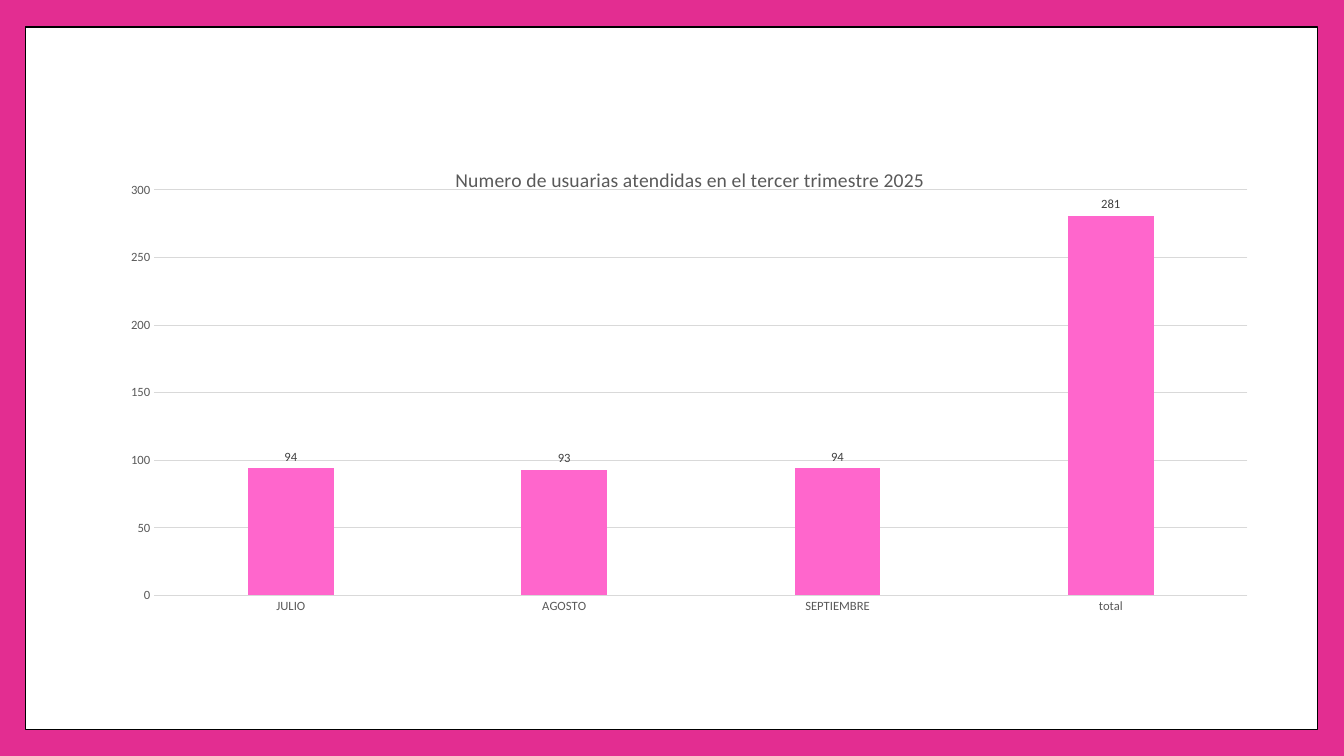
from dataclasses import dataclass

from lxml.etree import SubElement
from pptx import Presentation
from pptx.chart.data import CategoryChartData
from pptx.dml.color import RGBColor
from pptx.enum.chart import XL_CHART_TYPE, XL_LABEL_POSITION, XL_TICK_MARK
from pptx.enum.shapes import MSO_SHAPE
from pptx.oxml.ns import qn
from pptx.util import Inches, Pt


@dataclass(frozen=True)
class Theme:
    font: str = "Calibri"
    background: RGBColor = RGBColor(0xE3, 0x2D, 0x91)
    panel: RGBColor = RGBColor(0xFF, 0xFF, 0xFF)
    outline: RGBColor = RGBColor(0x00, 0x00, 0x00)
    bar: RGBColor = RGBColor(0xFF, 0x66, 0xCC)
    grid: RGBColor = RGBColor(0xD9, 0xD9, 0xD9)
    text: RGBColor = RGBColor(0x59, 0x59, 0x59)
    label: RGBColor = RGBColor(0x40, 0x40, 0x40)
    title_size: Pt = Pt(14)
    text_size: Pt = Pt(9)
    thin: Pt = Pt(0.75)


THEME = Theme()
TITLE = "Numero de usuarias atendidas en el tercer trimestre 2025"
USERS = {"JULIO": 94, "AGOSTO": 93, "SEPTIEMBRE": 94, "total": 281}


def style_font(font, color, size=THEME.text_size):
    font.name = THEME.font
    font.size = size
    font.bold = False
    font.color.rgb = color


def style_line(line, color, width=THEME.thin):
    line.color.rgb = color
    line.width = width


def place(element, index, **values):
    """Give a chart part a manual layout, in fractions of the chart."""
    for old in element.findall(qn("c:layout")):
        element.remove(old)
    layout = SubElement(element, qn("c:layout"))
    manual = SubElement(layout, qn("c:manualLayout"))
    for name, value in values.items():
        SubElement(manual, qn(f"c:{name}")).set("val", str(value))
    element.insert(index, layout)


def add_panel(slide):
    panel = slide.shapes.add_shape(
        MSO_SHAPE.RECTANGLE, Inches(0.25), Inches(0.27), Inches(12.82), Inches(6.97)
    )
    panel.shadow.inherit = False
    panel.fill.solid()
    panel.fill.fore_color.rgb = THEME.panel
    style_line(panel.line, THEME.outline, Pt(1))


def add_title(chart):
    frame = chart.chart_title.text_frame
    span = frame.paragraphs[0].add_run()
    span.text = TITLE
    style_font(span.font, THEME.text, THEME.title_size)
    place(chart.chart_title._element, 1, xMode="edge", yMode="edge", x=0.295, y=0.04)


def style_axes(chart):
    for axis in (chart.category_axis, chart.value_axis):
        axis.major_tick_mark = XL_TICK_MARK.NONE
        axis.minor_tick_mark = XL_TICK_MARK.NONE
        style_font(axis.tick_labels.font, THEME.text)
    style_line(chart.category_axis.format.line, THEME.grid)
    values = chart.value_axis
    values.minimum_scale, values.maximum_scale, values.major_unit = 0, 300, 50
    values.format.line.fill.background()
    style_line(values.major_gridlines.format.line, THEME.grid)


def style_bars(plot):
    plot.gap_width = 219
    plot.overlap = -27
    plot.vary_by_categories = False
    series = plot.series[0]
    series.invert_if_negative = False
    series.format.fill.solid()
    series.format.fill.fore_color.rgb = THEME.bar
    labels = series.data_labels
    labels.show_value = True
    labels.position = XL_LABEL_POSITION.OUTSIDE_END
    style_font(labels.font, THEME.label)


def add_users_chart(slide):
    data = CategoryChartData()
    data.categories = USERS.keys()
    data.add_series("Series 1", USERS.values())
    chart = slide.shapes.add_chart(
        XL_CHART_TYPE.COLUMN_CLUSTERED,
        Inches(1.12), Inches(1.41), Inches(11.39), Inches(5.1), data,
    ).chart
    chart.has_legend = False
    style_font(chart.font, THEME.text)
    add_title(chart)
    style_axes(chart)
    style_bars(chart.plots[0])
    plot_area = chart._chartSpace.find(".//" + qn("c:plotArea"))
    place(plot_area, 0, layoutTarget="inner", xMode="edge", yMode="edge",
          x=0.036, y=0.093, w=0.952, h=0.789)


def main():
    deck = Presentation()
    deck.slide_width, deck.slide_height = Inches(13.33), Inches(7.5)
    page = deck.slides.add_slide(deck.slide_layouts[6])
    page.background.fill.solid()
    page.background.fill.fore_color.rgb = THEME.background
    add_panel(page)
    add_users_chart(page)
    deck.save("out.pptx")


if __name__ == "__main__":
    main()
